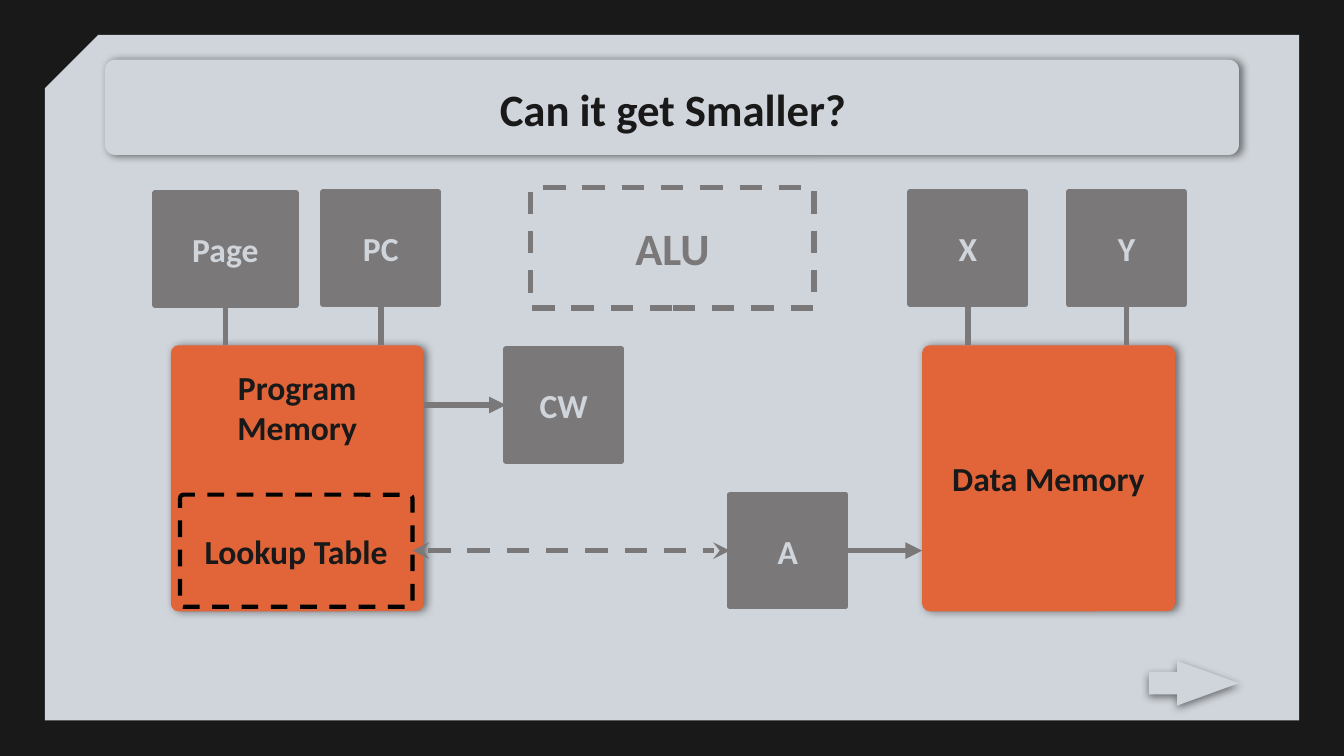
from dataclasses import dataclass

from lxml import etree
from pptx import Presentation, util as u
from pptx.dml import color
from pptx.enum import dml, shapes, text
from pptx.oxml import ns

Pt = u.Pt
KIND = shapes.MSO_SHAPE


@dataclass(frozen=True)
class Theme:
    font: str = "Calibri"
    ink: str = "191919"
    paper: str = "D0D5DB"
    grey: str = "7A7879"
    orange: str = "E16539"
    black: str = "000000"
    title_size: int = 24
    label_size: int = 18
    rule: float = 3
    thin_rule: float = 2.25


@dataclass(frozen=True)
class Box:
    left: float
    top: float
    width: float
    height: float

    def inner(self, left, top, width, height):
        """Box placed relative to this one."""
        return Box(self.left + left, self.top + top, width, height)

    @property
    def lengths(self):
        return [Pt(value) for value in (self.left, self.top, self.width, self.height)]

    @property
    def right(self):
        return self.left + self.width

    @property
    def bottom(self):
        return self.top + self.height

    @property
    def center(self):
        return self.left + self.width / 2

    @property
    def middle(self):
        return self.top + self.height / 2


THEME = Theme()
REGISTER = (62, 60)
MEMORY = (135.5, 142.5)


def rgb(value):
    return color.RGBColor.from_string(value)


def write(shape, words, ink, size=THEME.label_size, anchor=text.MSO_ANCHOR.MIDDLE):
    frame = shape.text_frame
    frame.word_wrap = True
    frame.auto_size = text.MSO_AUTO_SIZE.NONE
    frame.vertical_anchor = anchor
    frame.margin_left = frame.margin_right = Pt(7.2)
    frame.margin_top = frame.margin_bottom = Pt(7.2)
    frame.text = words
    para = frame.paragraphs[0]
    para.alignment = text.PP_ALIGN.CENTER
    para.font.name = THEME.font
    para.font.size = Pt(size)
    para.font.bold = True
    para.font.color.rgb = rgb(ink)


def style_line(line, ink, width=THEME.rule, dashed=False):
    line.color.rgb = rgb(ink)
    line.width = Pt(width)
    if dashed:
        line.dash_style = dml.MSO_LINE.DASH


def add_block(page, kind, box, fill=None, adjust=()):
    """Preset shape without line or shadow; no fill means see-through."""
    shape = page.shapes.add_shape(kind, *box.lengths)
    shape.shadow.inherit = False
    for index, value in enumerate(adjust):
        shape.adjustments[index] = value
    if fill:
        shape.fill.solid()
        shape.fill.fore_color.rgb = rgb(fill)
    else:
        shape.fill.background()
    shape.line.fill.background()
    return shape


def cast_shadow(shape, degrees=6):
    effects = shape._element.spPr.find(ns.qn("a:effectLst"))
    outer = etree.SubElement(
        effects, ns.qn("a:outerShdw"), blurRad=str(Pt(4.5)), dist=str(Pt(1.5)),
        dir=str(degrees * 60000), algn="bl", rotWithShape="0")
    tint = etree.SubElement(outer, ns.qn("a:srgbClr"), val=THEME.black)
    etree.SubElement(tint, ns.qn("a:alpha"), val="50000")


def add_link(page, start, end, head=None, tail=None, dashed=False):
    link = page.shapes.add_connector(
        shapes.MSO_CONNECTOR.STRAIGHT, *[Pt(value) for value in (*start, *end)])
    style_line(link.line, THEME.grey, dashed=dashed)
    outline = link.line._get_or_add_ln()
    for tag, form in (("a:headEnd", head), ("a:tailEnd", tail)):
        if form:
            etree.SubElement(outline, ns.qn(tag), type=form)
    etree.SubElement(link._element.spPr, ns.qn("a:effectLst"))


def add_register(page, box, words):
    shape = add_block(page, KIND.RECTANGLE, box, THEME.grey)
    style_line(shape.line, THEME.grey)
    write(shape, words, THEME.paper)


def add_memory(page, box):
    shape = add_block(page, KIND.ROUNDED_RECTANGLE, box, THEME.orange, [0.031])
    cast_shadow(shape)
    return shape


def add_pointers(page, memory, pointers):
    """Address registers above a memory, each joined to its top edge."""
    for words, box in pointers:
        add_link(page, (box.center, memory.top), (box.center, box.bottom))
        add_register(page, box, words)


def add_backdrop(page, box):
    panel = add_block(page, KIND.SNIP_1_RECTANGLE, box, THEME.paper, [0.078])
    panel._element.spPr.xfrm.set("flipH", "1")
    bar = add_block(page, KIND.ROUNDED_RECTANGLE, box.inner(32.25, 13.25, 607.5, 51),
                    THEME.paper, [0.106])
    cast_shadow(bar)
    arrow = add_block(page, KIND.RIGHT_ARROW, box.inner(591.5, 335.25, 48.25, 24),
                      THEME.paper, [0.5, 1.38])
    cast_shadow(arrow, 90)


def add_title(page, box, words):
    title = page.shapes.title
    title.left, title.top, title.width, title.height = box.lengths
    write(title, words, THEME.ink, THEME.title_size)
    page.shapes._spTree.append(title._element)  # bring in front of the backdrop


def add_program_side(page, box):
    """Program memory with its registers; returns the lookup table's box."""
    memory = box.inner(8.5, 82, *MEMORY)
    add_memory(page, memory)
    add_pointers(page, memory, [
        ("Page", box.inner(0, 0.5, 75.5, 60)), ("PC", box.inner(90, 0, *REGISTER))])

    word = box.inner(188, 84, *REGISTER)
    add_link(page, (memory.right, word.middle), (word.left, word.middle), tail="triangle")
    add_register(page, word, "CW")

    label = page.shapes.add_textbox(*memory.inner(0, 4.25, memory.width, 58.5).lengths)
    write(label, "Program Memory", THEME.ink, anchor=text.MSO_ANCHOR.TOP)

    table = memory.inner(5, 80, 124.5, 60)
    shape = add_block(page, KIND.ROUNDED_RECTANGLE, table, adjust=[0.031])
    style_line(shape.line, THEME.black, THEME.thin_rule, dashed=True)
    write(shape, "Lookup Table", THEME.ink)
    return table


def add_data_side(page, box):
    """Data memory with its registers; returns the accumulator's box."""
    memory = box.inner(103, 82, *MEMORY)
    write(add_memory(page, memory), "Data Memory", THEME.ink)
    add_pointers(page, memory, [
        ("X", box.inner(96.5, 0, *REGISTER)), ("Y", box.inner(181.5, 0, *REGISTER))])

    accumulator = box.inner(0, 162, *REGISTER)
    add_link(page, (accumulator.right, accumulator.middle),
             (memory.left, accumulator.middle), tail="triangle")
    add_register(page, accumulator, "A")
    return accumulator


def add_alu(page, box):
    shape = add_block(page, KIND.RECTANGLE, box)
    style_line(shape.line, THEME.grey, dashed=True)
    write(shape, "ALU", THEME.grey, THEME.title_size)


def main():
    deck = Presentation()
    deck.slide_width, deck.slide_height = Pt(720), Pt(405)
    page = deck.slides.add_slide(deck.slide_layouts[5])
    page.background.fill.solid()
    page.background.fill.fore_color.rgb = rgb(THEME.ink)

    add_backdrop(page, Box(24, 18.75, 672, 367.25))
    add_title(page, Box(57, 35.5, 607, 45.5), "Can it get Smaller?")
    table = add_program_side(page, Box(83, 103, 250, 225))
    accumulator = add_data_side(page, Box(391, 103, 243.5, 225))
    add_alu(page, Box(284.25, 100.5, 152, 64.5))
    add_link(page, (table.right, table.middle), (accumulator.left, accumulator.middle),
             head="stealth", tail="stealth", dashed=True)
    deck.save("out.pptx")


if __name__ == "__main__":
    main()
